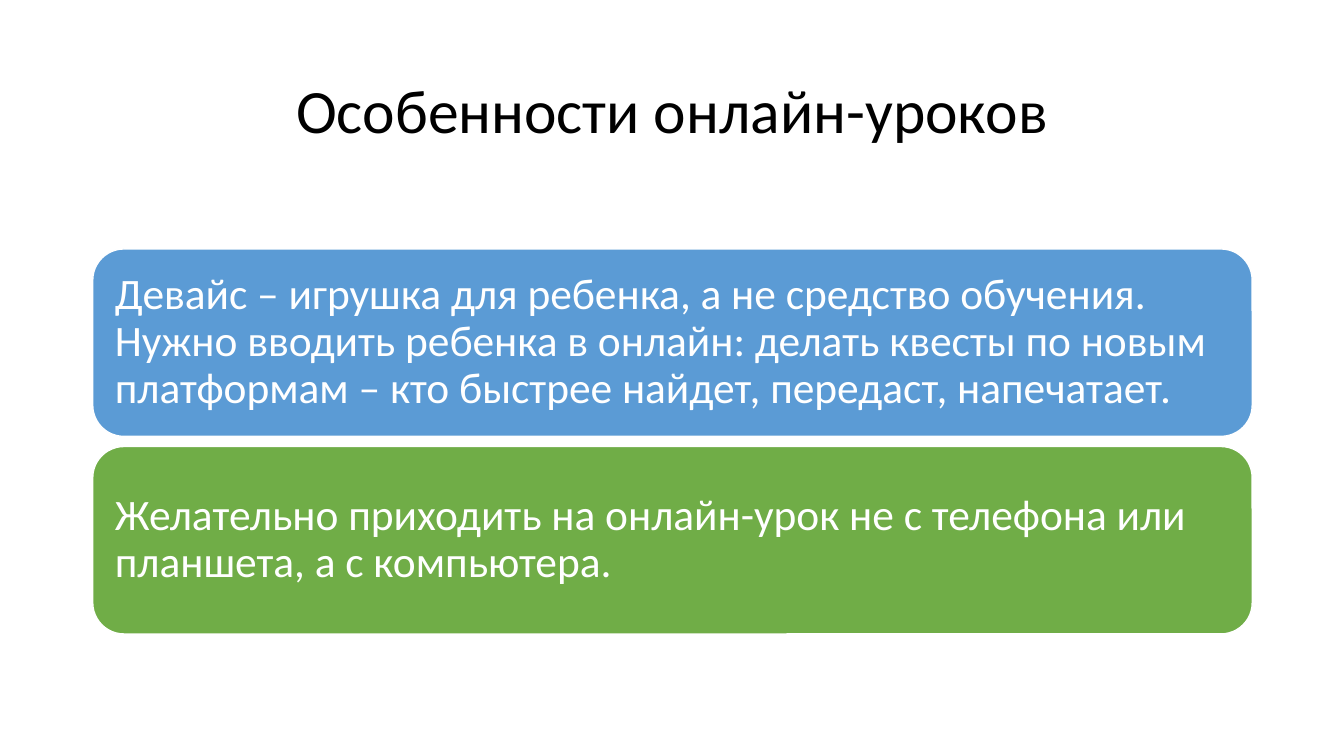
"""Build a slide on the specifics of online lessons."""
from pptx import Presentation
from pptx.dml.color import RGBColor
from pptx.enum.shapes import MSO_SHAPE
from pptx.enum.text import MSO_ANCHOR, PP_ALIGN
from pptx.util import Inches, Pt

LEFT, WIDTH = 0.92, 11.5
CARD_TOP, CARD_HEIGHT, CARD_GAP = 2.47, 1.86, 0.1
CARD_INSET = Inches(0.13)
CARDS = [
    ("5B9BD5", "Девайс – игрушка для ребенка, а не средство обучения. "
               "Нужно вводить ребенка в онлайн: делать квесты по новым "
               "платформам – кто быстрее найдет, передаст, напечатает."),
    ("70AD47", "Желательно приходить на онлайн-урок не с телефона или "
               "планшета, а с компьютера."),
]


def rgb(value):
    """Return the colour for a hex string."""
    return RGBColor.from_string(value)


def set_text(sp, text, size, color, align):
    """Fill a shape with one middle-anchored paragraph."""
    tf = sp.text_frame
    tf.text = text
    tf.word_wrap = True
    tf.vertical_anchor = MSO_ANCHOR.MIDDLE
    p = tf.paragraphs[0]
    p.alignment = align
    p.line_spacing = 0.9
    p.font.name = "Calibri"
    p.font.size = Pt(size)
    p.font.color.rgb = rgb(color)


def add_title(s, text):
    """Place and format the title placeholder."""
    sp = s.shapes.title
    sp.left, sp.top = Inches(LEFT), Inches(0.4)
    sp.width, sp.height = Inches(WIDTH), Inches(1.45)
    set_text(sp, text, 44, "000000", PP_ALIGN.CENTER)


def add_card(s, top, fill, text):
    """Add a rounded card with left-aligned white text."""
    sp = s.shapes.add_shape(MSO_SHAPE.ROUNDED_RECTANGLE, Inches(LEFT),
                            Inches(top), Inches(WIDTH), Inches(CARD_HEIGHT))
    sp.shadow.inherit = False
    sp.fill.solid()
    sp.fill.fore_color.rgb = rgb(fill)
    sp.line.color.rgb = rgb("FFFFFF")
    sp.line.width = Pt(1)
    tf = sp.text_frame
    tf.margin_left = tf.margin_right = CARD_INSET
    tf.margin_top = tf.margin_bottom = CARD_INSET
    set_text(sp, text, 31, "FFFFFF", PP_ALIGN.LEFT)


def main():
    """Build and save the slide."""
    prs = Presentation()
    prs.slide_width, prs.slide_height = Inches(13.33), Inches(7.5)
    s = prs.slides.add_slide(prs.slide_layouts[5])
    add_title(s, "Особенности онлайн-уроков")
    for i, (fill, text) in enumerate(CARDS):
        add_card(s, CARD_TOP + i * (CARD_HEIGHT + CARD_GAP), fill, text)
    prs.save("out.pptx")


if __name__ == "__main__":
    main()
